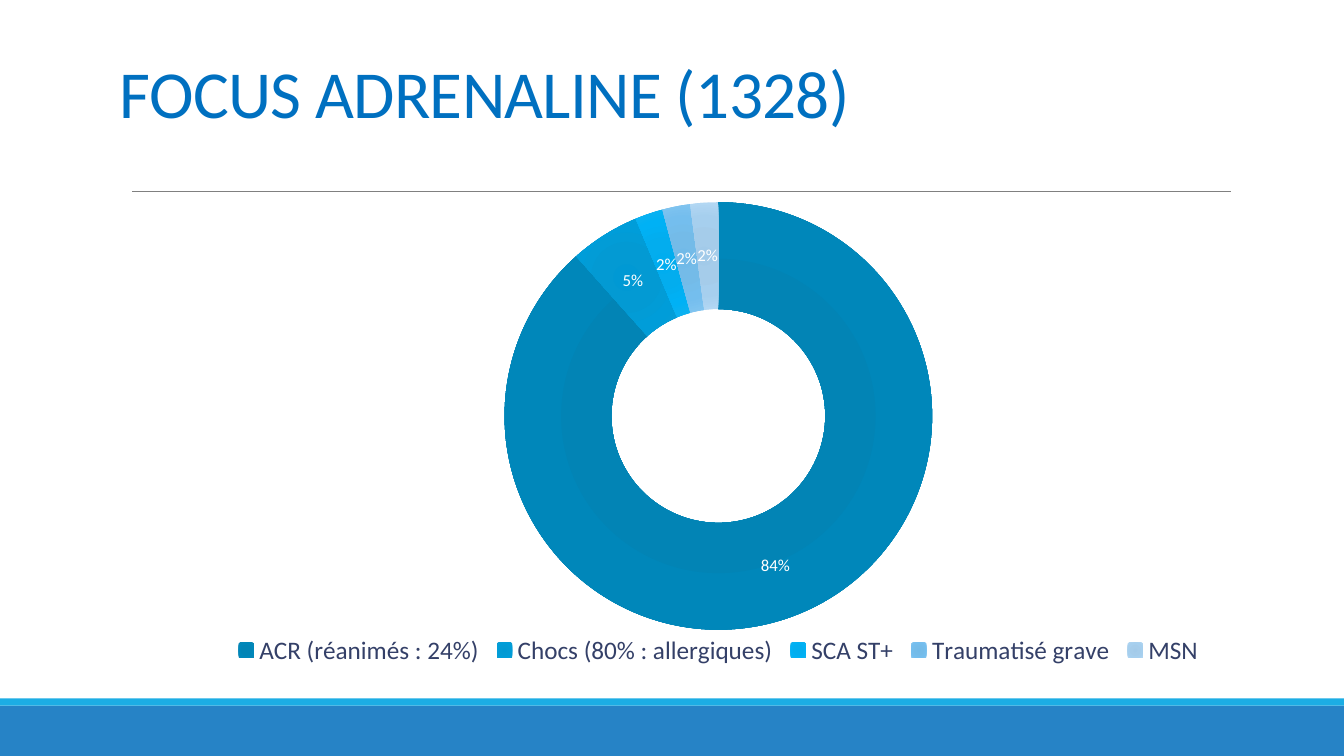
from pptx import Presentation
from pptx.chart.data import CategoryChartData
from pptx.dml.color import RGBColor
from pptx.enum import chart as charts, shapes, text
from pptx.oxml import parse_xml
from pptx.oxml.ns import nsdecls, qn
from pptx.util import Inches, Pt


def color(hex_code):
    return RGBColor.from_string(hex_code)


def radial_fill(hex_codes):
    """Build a circular gradient from four colours, centred bottom right."""
    stops = "".join(
        f'<a:gs pos="{percent * 1000}"><a:srgbClr val="{code}"/></a:gs>'
        for percent, code in zip((0, 34, 70, 100), hex_codes)
    )
    return parse_xml(
        f'<a:gradFill {nsdecls("a")} rotWithShape="1"><a:gsLst>{stops}</a:gsLst>'
        '<a:path path="circle"><a:fillToRect l="100000" t="100000" r="100000" b="100000"/>'
        "</a:path></a:gradFill>"
    )


prs = Presentation()
prs.slide_width = Inches(13.33)
prs.slide_height = Inches(7.5)
slide = prs.slides.add_slide(prs.slide_layouts[6])

# Footer bands and rule under the title
for top, height, band_color in ((7, 0.5, "2683C6"), (6.93, 0.07, "1CADE4")):
    band = slide.shapes.add_shape(
        shapes.MSO_SHAPE.RECTANGLE, 0, Inches(top), prs.slide_width, Inches(height))
    band.shadow.inherit = False
    band.fill.solid()
    band.fill.fore_color.rgb = color(band_color)
    band.line.fill.background()

rule = slide.shapes.add_connector(
    shapes.MSO_CONNECTOR.STRAIGHT, Inches(1.31), Inches(1.9), Inches(12.21), Inches(1.9))
rule.line.color.rgb = color("808080")
rule.line.width = Pt(0.5)
rule._element.spPr.append(parse_xml(f'<a:effectLst {nsdecls("a")}/>'))

# Title
title = slide.shapes.add_textbox(Inches(1.09), Inches(-0.23), Inches(11), Inches(1.59))
title.text_frame.word_wrap = True
title.text_frame.vertical_anchor = text.MSO_ANCHOR.BOTTOM
title.text_frame.text = "FOCUS ADRENALINE (1328)"
heading = title.text_frame.paragraphs[0]
heading.line_spacing = 0.85
heading_run = heading.runs[0]
heading_run.font.name = "Calibri"
heading_run.font.size = Pt(48)
heading_run.font.color.rgb = color("0070C0")
heading_run.font._element.set("spc", "-50")

# Doughnut of adrenaline indications: name, share, gradient colours
indications = [
    ("ACR (réanimés : 24%)", 0.84, ("0083B5", "0284B5", "0087BA", "0E87B5")),
    ("Chocs (80% : allergiques)", 0.05, ("0099D4", "039AD3", "009DD9", "109ED3")),
    ("SCA ST+", 0.02, ("00ADEF", "03ADEE", "00B1F5", "12B1EE")),
    ("Traumatisé grave", 0.02, ("71BAE8", "74BBE8", "74BEEE", "83C5F0")),
    ("MSN", 0.02, ("A2CAE9", "A5CCEA", "A6CFEE", "B4D8F4")),
]
shares = CategoryChartData(number_format="0%")
shares.categories = [name for name, _, _ in indications]
shares.add_series("Series 1", [share for _, share, _ in indications])
doughnut = slide.shapes.add_chart(
    charts.XL_CHART_TYPE.DOUGHNUT,
    Inches(2.17), Inches(1.7), Inches(9.91), Inches(5.11), shares).chart
doughnut.has_title = False
doughnut.font.name = "Calibri"
doughnut.font.size = Pt(10)
doughnut.font.color.rgb = color("000000")

doughnut.has_legend = True
legend = doughnut.legend
legend.position = charts.XL_LEGEND_POSITION.BOTTOM
legend.include_in_layout = False
legend.font.name = "Calibri"
legend.font.size = Pt(18)
legend.font.color.rgb = color("344068")

ring = doughnut.plots[0].series[0]
for index, (_, _, hex_codes) in enumerate(indications):
    sector = ring.points[index].format
    sector.line.fill.background()
    sector_properties = sector._element.get_or_add_spPr()
    sector_properties.insert(0, radial_fill(hex_codes))

labels = ring.data_labels
labels.show_value = True
labels.show_percentage = False
labels.number_format = "0%"
labels.number_format_is_linked = False
labels.font.name = "Calibri"
labels.font.size = Pt(12)
labels.font.color.rgb = color("FFFFFF")

# Ring and legend positions as fractions of the chart, and hole size
plot_area = doughnut._chartSpace.chart.plotArea
legend_area = legend._element
for area, place, target, (x, y, w, h) in (
    (plot_area, 0, '<c:layoutTarget val="inner"/>', (0.28, 0.06, 0.44, 0.83)),
    (legend_area, 1, "", (0.01, 0.89, 0.98, 0.08)),
):
    for automatic_layout in area.findall(qn("c:layout")):
        area.remove(automatic_layout)
    area.insert(place, parse_xml(
        f'<c:layout {nsdecls("c")}><c:manualLayout>{target}'
        f'<c:xMode val="edge"/><c:yMode val="edge"/><c:x val="{x}"/><c:y val="{y}"/>'
        f'<c:w val="{w}"/><c:h val="{h}"/></c:manualLayout></c:layout>'))
plot_area.find(".//" + qn("c:holeSize")).set("val", "75")

prs.save("out.pptx")
